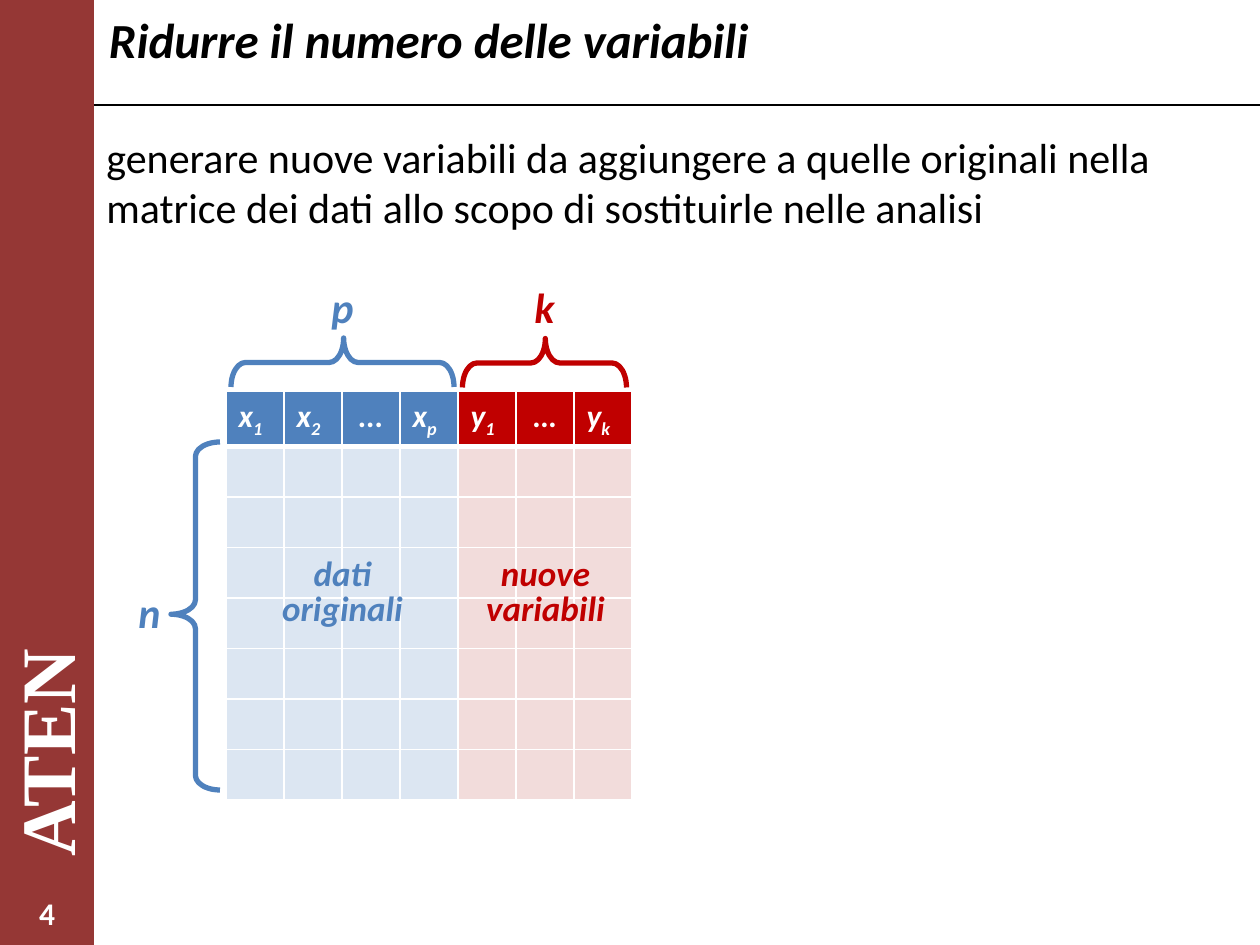
from dataclasses import dataclass

from lxml import etree
from pptx import Presentation
from pptx import util as u
from pptx.dml.color import RGBColor
from pptx.enum import shapes, text
from pptx.oxml.ns import qn

SCALE = 7257.14  # EMU per px, 126 px to the inch


def px(value):
    return u.Emu(round(value * SCALE))


@dataclass
class Theme:
    black: str = "000000"
    white: str = "FFFFFF"
    band: str = "953735"
    blue: str = "4F81BD"
    pale_blue: str = "DCE6F2"
    red: str = "C00000"
    pale_red: str = "F2DCDB"
    body_font: str = "Calibri"
    logo_font: str = "Times New Roman"
    logo: int = 44
    title: int = 28
    body: int = 24
    note: int = 20
    cell: int = 18


class SlideBuilder:
    def __init__(self, page, theme):
        self.page, self.theme = page, theme

    def run(self, para, words, size, color, lowered=False, **style):
        span = para.add_run()
        span.text = words
        style = {"name": self.theme.body_font, "size": u.Pt(size), **style}
        for name, value in style.items():
            setattr(span.font, name, value)
        span.font.color.rgb = RGBColor.from_string(color)
        if lowered:
            span.font._element.set("baseline", "-25000")

    def text(self, place, words, size, color, frame=None, para_format=None, vert=None, **style):
        box = self.page.shapes.add_textbox(*map(px, place))
        for name, value in {"word_wrap": True, **(frame or {})}.items():
            setattr(box.text_frame, name, value)
        if vert:
            box.text_frame._txBody.find(qn("a:bodyPr")).set("vert", vert)
        para = box.text_frame.paragraphs[0]
        for name, value in (para_format or {}).items():
            setattr(para, name, value)
        self.run(para, words, size, color, **style)

    def rect(self, place, color):
        shape = self.page.shapes.add_shape(shapes.MSO_SHAPE.RECTANGLE, *map(px, place))
        shape.shadow.inherit = False
        shape.fill.solid()
        shape.fill.fore_color.rgb = RGBColor.from_string(color)
        shape.line.fill.background()

    def rule(self, start, end, color):
        line = self.page.shapes.add_connector(
            shapes.MSO_CONNECTOR.STRAIGHT, *map(px, start + end))
        line.line.color.rgb = RGBColor.from_string(color)
        line.line.width = u.Pt(1)
        etree.SubElement(line._element.spPr, qn("a:effectLst"))

    def brace(self, place, color, rotation=0):
        shape = self.page.shapes.add_shape(shapes.MSO_SHAPE.LEFT_BRACE, *map(px, place))
        shape.shadow.inherit = False
        shape.rotation = rotation
        shape.adjustments[0], shape.adjustments[1] = 0.295, 0.495
        shape.fill.background()
        shape.line.color.rgb = RGBColor.from_string(color)
        shape.line.width = u.Pt(3)

    def borders(self, cell, widths):
        props = cell._tc.get_or_add_tcPr()
        for index, (side, width) in enumerate(zip("LRTB", widths)):
            line = etree.Element(qn(f"a:ln{side}"), w=str(u.Pt(width)))
            fill = etree.SubElement(line, qn("a:solidFill"))
            etree.SubElement(fill, qn("a:srgbClr"), val=self.theme.white)
            props.insert(index, line)

    def matrix(self, place, headers, row_count, column_fills):
        frame = self.page.shapes.add_table(row_count, len(headers), *map(px, place))
        table = frame.table
        table.first_row = table.horz_banding = False
        for row in range(row_count):
            for column, (symbol, index) in enumerate(headers):
                cell = table.cell(row, column)
                cell.fill.solid()
                cell.fill.fore_color.rgb = RGBColor.from_string(column_fills[column][row > 0])
                self.borders(cell, (1, 1, 3 if row == 1 else 1, 3 if row == 0 else 1))
                if row:
                    continue
                para = cell.text_frame.paragraphs[0]
                style = {"bold": True, "italic": True}
                self.run(para, symbol, self.theme.cell, self.theme.white, **style)
                if index:
                    self.run(para, index, self.theme.cell, self.theme.white, True, **style)
                else:
                    para.alignment = text.PP_ALIGN.CENTER


def main():
    deck = Presentation()
    deck.slide_width, deck.slide_height = px(1260), px(945)
    page = deck.slides.add_slide(deck.slide_layouts[6])
    theme = Theme()
    build = SlideBuilder(page, theme)
    centered = {"alignment": text.PP_ALIGN.CENTER}
    strong = {"bold": True, "italic": True}
    grow = {"auto_size": text.MSO_AUTO_SIZE.SHAPE_TO_FIT_TEXT}

    # Side band, rule and page number
    build.rect((0, 0, 94, 945), theme.band)
    build.rule((94, 105), (1260, 105), theme.black)
    no_margins = dict.fromkeys(
        ("margin_left", "margin_top", "margin_right", "margin_bottom"), 0)
    build.text((3, 626, 84, 231), "ATEN", theme.logo, theme.white, vert="vert270",
               frame={**no_margins, "word_wrap": False,
                      "vertical_anchor": text.MSO_ANCHOR.MIDDLE},
               name=theme.logo_font, bold=True)
    build.text((0, 888, 94, 50), "4", theme.cell, theme.white,
               para_format=centered, bold=True)

    # Title and body
    build.text((94, 0, 1166, 125), "Ridurre il numero delle variabili",
               theme.title, theme.black,
               frame={**no_margins, "margin_left": px(15), "margin_top": px(10)}, **strong)
    build.text((94, 125, 1166, 820),
               "generare nuove variabili da aggiungere a quelle originali nella "
               "matrice dei dati allo scopo di sostituirle nelle analisi",
               theme.body, theme.black, para_format={"space_before": u.Pt(6)})

    # Data matrix: original variables, then new ones
    headers = [("x", "1"), ("x", "2"), ("...", ""), ("x", "p"),
               ("y", "1"), ("…", ""), ("y", "k")]
    fills = [(theme.blue, theme.pale_blue)] * 4 + [(theme.red, theme.pale_red)] * 3
    build.matrix((226, 391, 406, 400), headers, 8, fills)

    # Braces
    build.brace((171, 442, 49, 348), theme.blue)
    build.brace((318, 251, 49, 223), theme.blue, 90)
    build.brace((520, 281, 49, 164), theme.red, 90)

    # Dimension labels
    for place, letter, color in (((126, 580, 48, 63), "n", theme.blue),
                                 ((319, 275, 48, 63), "p", theme.blue),
                                 ((522, 275, 45, 63), "k", theme.red)):
        build.text(place, letter, theme.body, color,
                   frame={**grow, "word_wrap": False}, **strong)

    # Block captions
    for place, words, color in (((268, 552, 149, 83), "dati originali", theme.blue),
                                ((461, 552, 169, 84), "nuove variabili", theme.red)):
        build.text(place, words, theme.note, color, frame=grow,
                   para_format={**centered, "line_spacing": u.Pt(20)}, **strong)

    deck.save("out.pptx")


if __name__ == "__main__":
    main()
